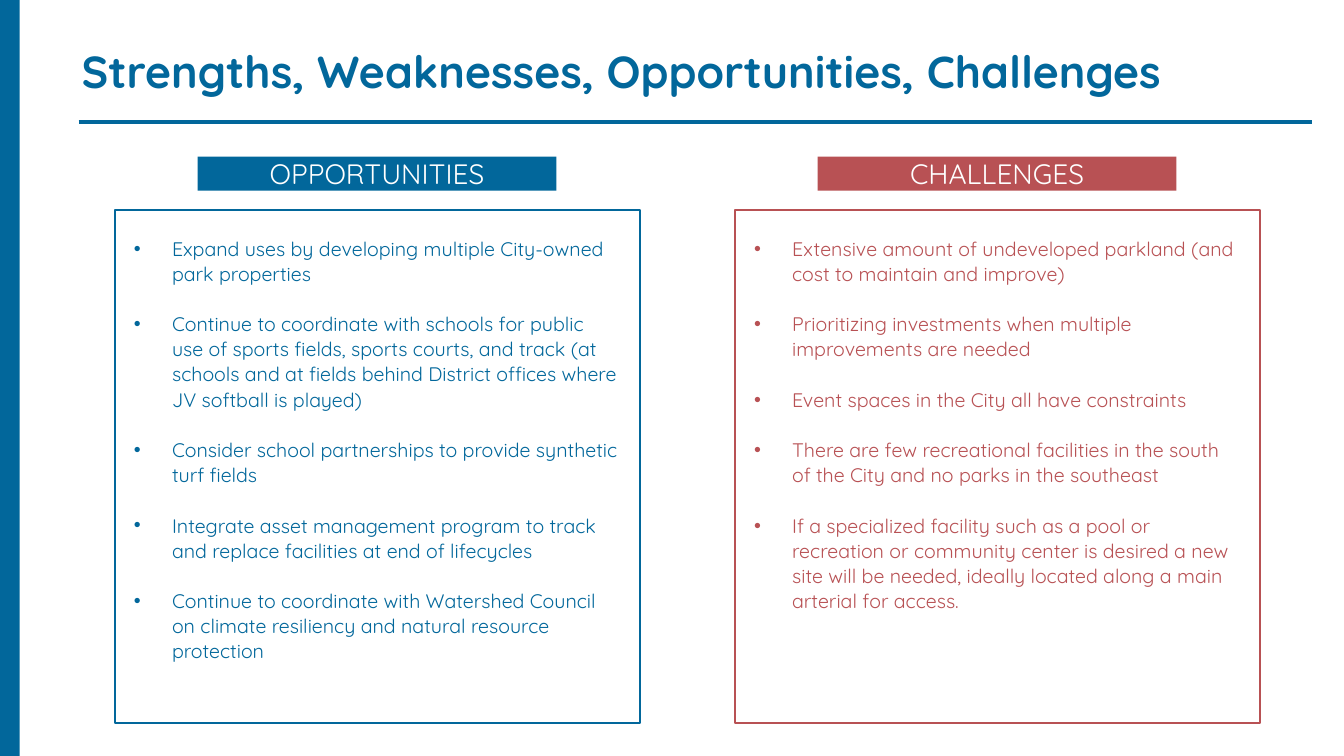
from lxml import etree
from pptx import Presentation
from pptx.dml.color import RGBColor
from pptx.enum.shapes import MSO_CONNECTOR, MSO_SHAPE
from pptx.enum.text import MSO_ANCHOR, PP_ALIGN
from pptx.oxml.ns import qn
from pptx.util import Pt

RECTANGLE = MSO_SHAPE.RECTANGLE
STRAIGHT = MSO_CONNECTOR.STRAIGHT
MIDDLE = MSO_ANCHOR.MIDDLE
LEFT, CENTER = PP_ALIGN.LEFT, PP_ALIGN.CENTER

COLORS = {"blue": "02679B", "red": "B85154", "white": "FFFFFF"}
FORMATS = {
    "title": {"name": "Quicksand", "size": Pt(32), "bold": True},
    "heading": {"name": "Quicksand", "size": Pt(20), "bold": False},
    "bullet": {"name": "Quicksand", "size": Pt(14), "bold": False},
}
COLUMN_LEFT, COLUMN_STEP = 82, 442.9
BULLET_INDENT = 27.2
BULLET_GAP = 18

COLUMNS = [
    ("OPPORTUNITIES", "blue", [
        "Expand uses by developing multiple City-owned park properties",
        "Continue to coordinate with schools for public use of sports fields, sports courts, "
        "and track (at schools and at fields behind District offices where JV softball is played)",
        "Consider school partnerships to provide synthetic turf fields",
        "Integrate asset management program to track and replace facilities at end of lifecycles",
        "Continue to coordinate with Watershed Council on climate resiliency and natural "
        "resource protection",
    ]),
    ("CHALLENGES", "red", [
        "Extensive amount of undeveloped parkland (and cost to maintain and improve)",
        "Prioritizing investments when multiple improvements are needed",
        "Event spaces in the City all have constraints",
        "There are few recreational facilities in the south of the City and no parks in the "
        "southeast",
        "If a specialized facility such as a pool or recreation or community center is desired "
        "a new site will be needed, ideally located along a main arterial for access.",
    ]),
]


class SlideBuilder:
    def __init__(self, slide, colors, formats):
        self.slide = slide
        self.colors = colors
        self.formats = formats

    def color(self, name):
        return RGBColor.from_string(self.colors[name])

    def rectangle(self, left, top, width, height, fill=None, line=None):
        shape = self.slide.shapes.add_shape(
            RECTANGLE, Pt(left), Pt(top), Pt(width), Pt(height))
        shape.shadow.inherit = False
        if fill:
            shape.fill.solid()
            shape.fill.fore_color.rgb = self.color(fill)
        else:
            shape.fill.background()
        if line:
            shape.line.color.rgb = self.color(line)
            shape.line.width = Pt(1.5)
        else:
            shape.line.fill.background()
        return shape

    def rule(self, left, right, top, color):
        connector = self.slide.shapes.add_connector(
            STRAIGHT, Pt(left), Pt(top), Pt(right), Pt(top))
        connector.line.color.rgb = self.color(color)
        connector.line.width = Pt(3)
        etree.SubElement(connector._element.spPr, qn("a:effectLst"))

    def text_box(self, left, top, width, height):
        return self.slide.shapes.add_textbox(Pt(left), Pt(top), Pt(width), Pt(height))

    def prepare_frame(self, shape, anchor=None):
        """Turn wrapping on, drop the insets and return the text frame."""
        frame = shape.text_frame
        values = {"word_wrap": True, "margin_left": 0, "margin_top": 0,
                  "margin_right": 0, "margin_bottom": 0}
        if anchor is not None:
            values["vertical_anchor"] = anchor
        for name, value in values.items():
            setattr(frame, name, value)
        return frame

    def add_text(self, paragraph, text, style, color, alignment=LEFT, line_spacing=1.0):
        paragraph.alignment = alignment
        paragraph.line_spacing = line_spacing
        run = paragraph.add_run()
        run.text = text
        for name, value in self.formats[style].items():
            setattr(run.font, name, value)
        run.font.color.rgb = self.color(color)

    def title(self, text, left, top, width, height, color):
        frame = self.prepare_frame(self.text_box(left, top, width, height), MIDDLE)
        self.add_text(frame.paragraphs[0], text, "title", color, line_spacing=0.9)

    def heading(self, text, left, top, width, height, fill):
        shape = self.rectangle(left, top, width, height, fill=fill)
        frame = self.prepare_frame(shape, MIDDLE)
        self.add_text(frame.paragraphs[0], text, "heading", "white", CENTER)

    def bullets(self, items, left, top, width, height, color):
        frame = self.prepare_frame(self.text_box(left, top, width, height))
        for index, item in enumerate(items):
            paragraph = frame.add_paragraph() if index else frame.paragraphs[0]
            properties = paragraph._p.get_or_add_pPr()
            properties.set("marL", str(Pt(BULLET_INDENT)))
            properties.set("indent", str(-Pt(BULLET_INDENT)))
            etree.SubElement(properties, qn("a:buFont")).set("typeface", "Arial")
            etree.SubElement(properties, qn("a:buChar")).set("char", "•")
            if index:
                paragraph.space_before = Pt(BULLET_GAP)
            self.add_text(paragraph, item, "bullet", color, line_spacing=1.07)


def main():
    presentation = Presentation()
    presentation.slide_width = Pt(960)
    presentation.slide_height = Pt(540)
    slide = presentation.slides.add_slide(presentation.slide_layouts[6])
    builder = SlideBuilder(slide, COLORS, FORMATS)

    builder.rectangle(0, 0, 14, 540, fill="blue")
    builder.title("Strengths, Weaknesses, Opportunities, Challenges",
                  58.3, 28.8, 872, 47.5, "blue")
    builder.rule(56.2, 937.4, 87.1, "blue")

    for index, (heading, color, items) in enumerate(COLUMNS):
        left = COLUMN_LEFT + index * COLUMN_STEP
        builder.rectangle(left, 149.8, 375, 366.5, line=color)
        builder.heading(heading, left + 59.2, 111.8, 256.3, 24.4, color)
        builder.bullets(items, left + 13.7, 167.8, 347, 307.4, color)

    presentation.save("out.pptx")


if __name__ == "__main__":
    main()
